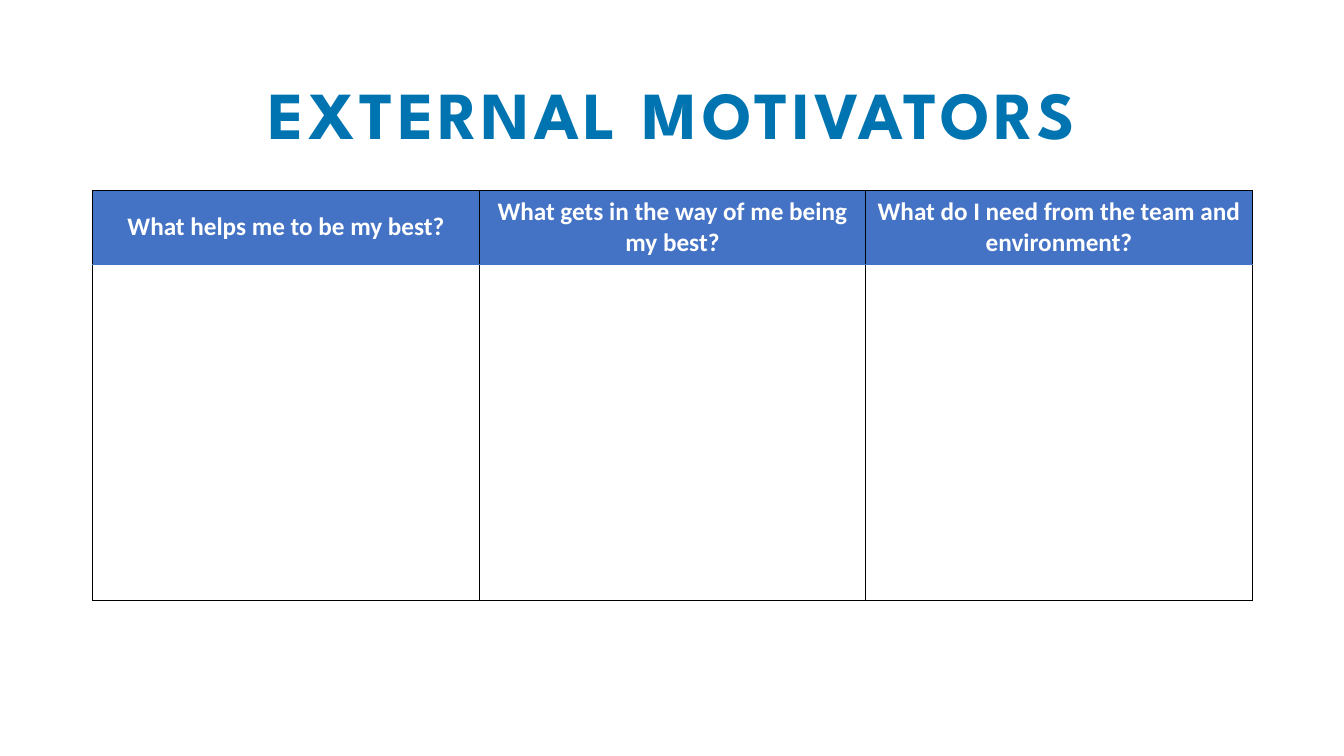
"""Build the External Motivators slide with its three-column worksheet table."""
from lxml.etree import SubElement
from pptx import Presentation
from pptx.dml.color import RGBColor
from pptx.enum.text import MSO_ANCHOR as Anchor, PP_ALIGN as Align
from pptx.oxml.ns import qn
from pptx.util import Inches, Pt

TITLE = "EXTERNAL MOTIVATORS"
QUESTIONS = [
    "What helps me to be my best?",
    "What gets in the way of me being my best?",
    "What do I need from the team and environment?",
]
BLUE, HEADER, WHITE, BLACK = "0074B0", "4472C4", "FFFFFF", "000000"
LEFT, WIDTH = 0.92, 11.5
TITLE_TOP, TITLE_HEIGHT = 0.44, 1.45
TABLE_TOP, ROW_HEIGHTS = 1.89, [0.73, 3.34]
OUTLINE, DIVIDER = (BLACK, 1), (HEADER, 0.5)
ROW_STYLES = [
    (HEADER, {"L": OUTLINE, "R": OUTLINE, "T": OUTLINE, "B": DIVIDER}),
    (WHITE, {"L": OUTLINE, "R": OUTLINE, "T": DIVIDER, "B": OUTLINE}),
]


def color(value):
    return RGBColor.from_string(value)


def write(frame, text, *, size, font, fill, line_spacing=1.0, tracking=0):
    frame.word_wrap = True
    para = frame.paragraphs[0]
    para.alignment = Align.CENTER
    para.line_spacing = line_spacing
    span = para.add_run()
    span.text = text
    span.font.size = Pt(size)
    span.font.name = font
    span.font.bold = True
    span.font.color.rgb = color(fill)
    if tracking:
        span.font._element.set("spc", str(tracking * 100))


def style_cell(cell, fill, borders):
    properties = cell._tc.get_or_add_tcPr()
    for side, (shade, points) in borders.items():
        line = SubElement(properties, qn(f"a:ln{side}"), w=str(Pt(points)))
        solid = SubElement(line, qn("a:solidFill"))
        SubElement(solid, qn("a:srgbClr"), val=shade)
    cell.fill.solid()
    cell.fill.fore_color.rgb = color(fill)


def add_title(page):
    box = page.shapes.add_textbox(
        Inches(LEFT), Inches(TITLE_TOP), Inches(WIDTH), Inches(TITLE_HEIGHT))
    box.text_frame.vertical_anchor = Anchor.MIDDLE
    write(box.text_frame, TITLE, size=48, font="League Spartan", fill=BLUE,
          line_spacing=0.9, tracking=3)


def add_worksheet(page):
    table = page.shapes.add_table(
        len(ROW_HEIGHTS), len(QUESTIONS), Inches(LEFT), Inches(TABLE_TOP),
        Inches(WIDTH), Inches(sum(ROW_HEIGHTS))).table
    table.horz_banding = False
    for row, height in zip(table.rows, ROW_HEIGHTS):
        row.height = Inches(height)
    for column, question in enumerate(QUESTIONS):
        table.columns[column].width = Inches(WIDTH / len(QUESTIONS))
        for row, (fill, borders) in enumerate(ROW_STYLES):
            style_cell(table.cell(row, column), fill, borders)
        heading = table.cell(0, column)
        heading.vertical_anchor = Anchor.MIDDLE
        write(heading.text_frame, question, size=18, font="Calibri", fill=WHITE)


def main():
    deck = Presentation()
    deck.slide_width, deck.slide_height = Inches(13.33), Inches(7.5)
    page = deck.slides.add_slide(deck.slide_layouts[6])
    add_title(page)
    add_worksheet(page)
    deck.save("out.pptx")


if __name__ == "__main__":
    main()
